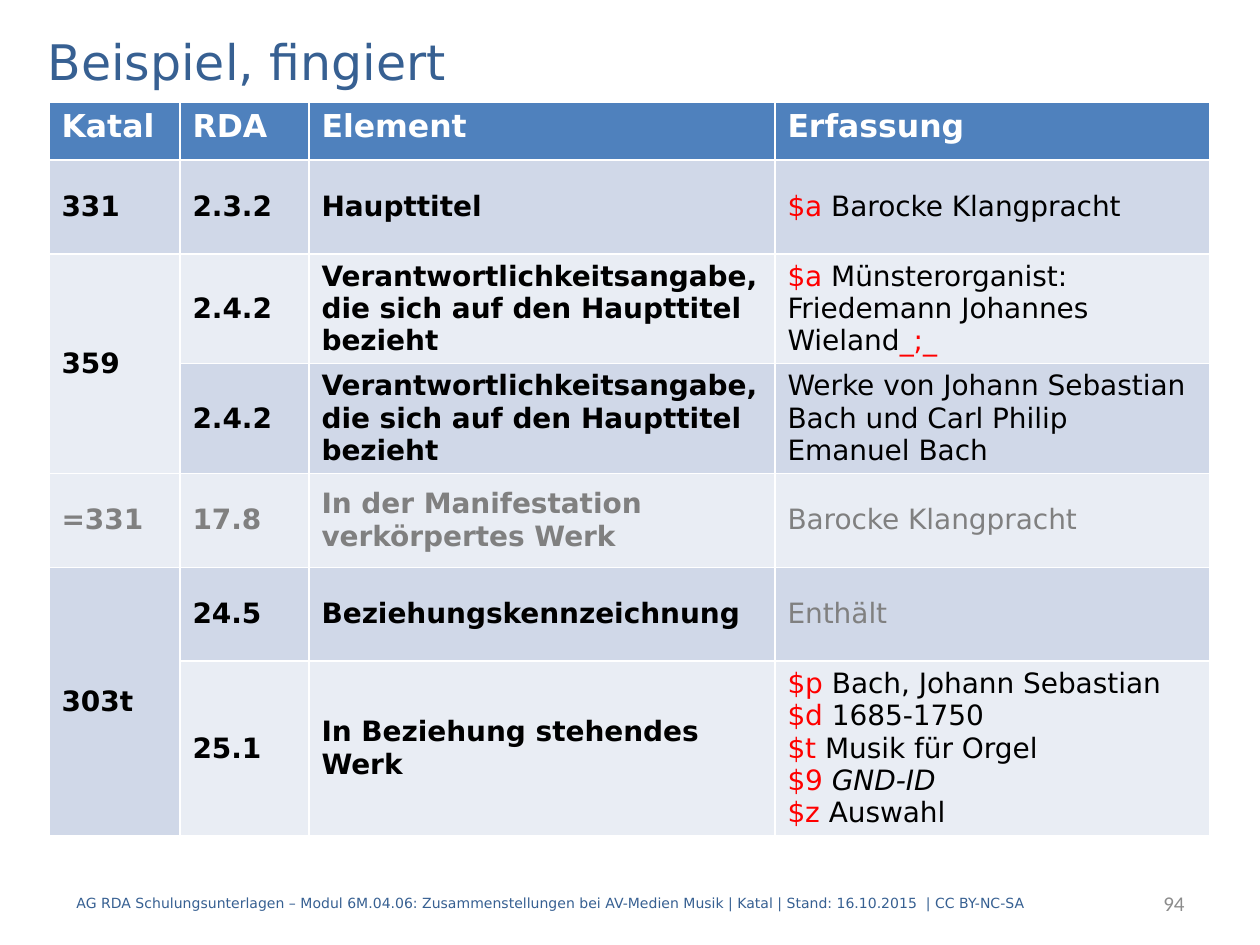
from pptx import Presentation
from pptx.dml.color import RGBColor
from pptx.enum.text import MSO_ANCHOR, PP_ALIGN
from pptx.util import Pt

MIDDLE, TOP = MSO_ANCHOR.MIDDLE, MSO_ANCHOR.TOP
LEFT, RIGHT = PP_ALIGN.LEFT, PP_ALIGN.RIGHT
SCALE = 914400 / 126
FONT = "DejaVu Sans"
COLORS = {
    "title": "376092", "header": "4F81BD", "white": "FFFFFF",
    "odd": "D0D8E8", "even": "E9EDF4", "black": "000000",
    "red": "FF0000", "gray": "808080", "number": "8C8C8C",
}
HEADERS = ["Katal", "RDA", "Element", "Erfassung"]
RESPONSIBILITY = "Verantwortlichkeitsangabe, die sich auf den Haupttitel bezieht"
COLUMN_WIDTHS = [131, 129, 466, 435]
HEADER_HEIGHT, ROW_HEIGHT = 58, 94
ROWS = [
    ("331", "2.3.2", "Haupttitel", "black",
     [[("$a", "red"), (" Barocke Klangpracht", "black")]]),
    ("359", "2.4.2", RESPONSIBILITY, "black",
     [[("$a", "red"), (" Münsterorganist: Friedemann Johannes Wieland", "black"),
       ("_;_", "red")]]),
    (None, "2.4.2", RESPONSIBILITY, "black",
     [[("Werke von Johann Sebastian Bach und Carl Philip Emanuel Bach", "black")]]),
    ("=331", "17.8", "In der Manifestation verkörpertes Werk", "gray",
     [[("Barocke Klangpracht", "gray")]]),
    ("303t", "24.5", "Beziehungskennzeichnung", "black",
     [[("Enthält", "gray")]]),
    (None, "25.1", "In Beziehung stehendes Werk", "black",
     [[("$p", "red"), (" Bach, Johann Sebastian", "black")],
      [("$d", "red"), (" 1685-1750", "black")],
      [("$t", "red"), (" Musik für Orgel", "black")],
      [("$9 ", "red"), ("GND-ID", "black", True)],
      [("$z", "red"), (" Auswahl", "black")]]),
]


def px(length):
    """Turn pixels into EMU."""
    return round(length * SCALE)


def write(frame, paragraphs, size, bold=False, font=FONT, align=LEFT):
    """Write paragraphs of (text, color, italic) runs into a text frame."""
    for index, runs in enumerate(paragraphs):
        paragraph = frame.add_paragraph() if index else frame.paragraphs[0]
        paragraph.alignment = align
        for text, color, *italic in runs:
            run = paragraph.add_run()
            run.text = text
            run.font.name = font
            run.font.size = Pt(size)
            run.font.bold = bold
            run.font.italic = bool(italic)
            run.font.color.rgb = RGBColor.from_string(COLORS[color])


def add_title(slide, box, text):
    """Place and fill the title placeholder."""
    title = slide.shapes.title
    title.left, title.top, title.width, title.height = map(px, box)
    title.text_frame.vertical_anchor = MIDDLE
    write(title.text_frame, [[(text, "title")]], 28)


def fill_cell(cell, color, paragraphs, size, bold, anchor):
    """Color a table cell and write its text."""
    cell.fill.solid()
    cell.fill.fore_color.rgb = RGBColor.from_string(COLORS[color])
    cell.vertical_anchor = anchor
    write(cell.text_frame, paragraphs, size, bold)


def add_element_table(slide, left, top):
    """Build the table of elements, joining codes that cover two rows."""
    height = HEADER_HEIGHT + ROW_HEIGHT * len(ROWS)
    table = slide.shapes.add_table(
        len(ROWS) + 1, len(HEADERS),
        *map(px, (left, top, sum(COLUMN_WIDTHS), height))).table
    for column, width in zip(table.columns, COLUMN_WIDTHS):
        column.width = px(width)
    for index, row in enumerate(table.rows):
        row.height = px(ROW_HEIGHT if index else HEADER_HEIGHT)
    for column, text in enumerate(HEADERS):
        fill_cell(table.cell(0, column), "header", [[(text, "white")]], 18, True, TOP)
    for row, (code, rule, element, color, entry) in enumerate(ROWS, 1):
        band = "odd" if row % 2 else "even"
        for column, text in enumerate((code, rule, element)):
            if text is None:
                table.cell(row - 1, column).merge(table.cell(row, column))
            else:
                fill_cell(table.cell(row, column), band, [[(text, color)]], 16, True, MIDDLE)
        fill_cell(table.cell(row, 3), band, entry, 16, False, MIDDLE)


def add_label(slide, box, text, color, size, font=FONT, align=LEFT):
    """Add one line of footer text."""
    frame = slide.shapes.add_textbox(*map(px, box)).text_frame
    frame.word_wrap = True
    frame.vertical_anchor = MIDDLE
    write(frame, [[(text, color)]], size, font=font, align=align)


def add_footer(slide, left, top, height):
    """Add the source line and the page number."""
    add_label(slide, (left, top, 1101, height),
              "AG RDA Schulungsunterlagen – Modul 6M.04.06: Zusammenstellungen bei "
              "AV-Medien Musik | Katal | Stand: 16.10.2015  | CC BY-NC-SA", "title", 8)
    add_label(slide, (left + 933, top, 200, height), "94", "number", 12, "Calibri", RIGHT)


def main():
    """Build and save the slide."""
    presentation = Presentation()
    presentation.slide_width, presentation.slide_height = px(1260), px(945)
    slide = presentation.slides.add_slide(presentation.slide_layouts[5])
    add_title(slide, (35, 25, 1191, 71), "Beispiel, fingiert")
    add_element_table(slide, 49, 102)
    add_footer(slide, 64, 878, 50)
    presentation.save("out.pptx")


if __name__ == "__main__":
    main()
